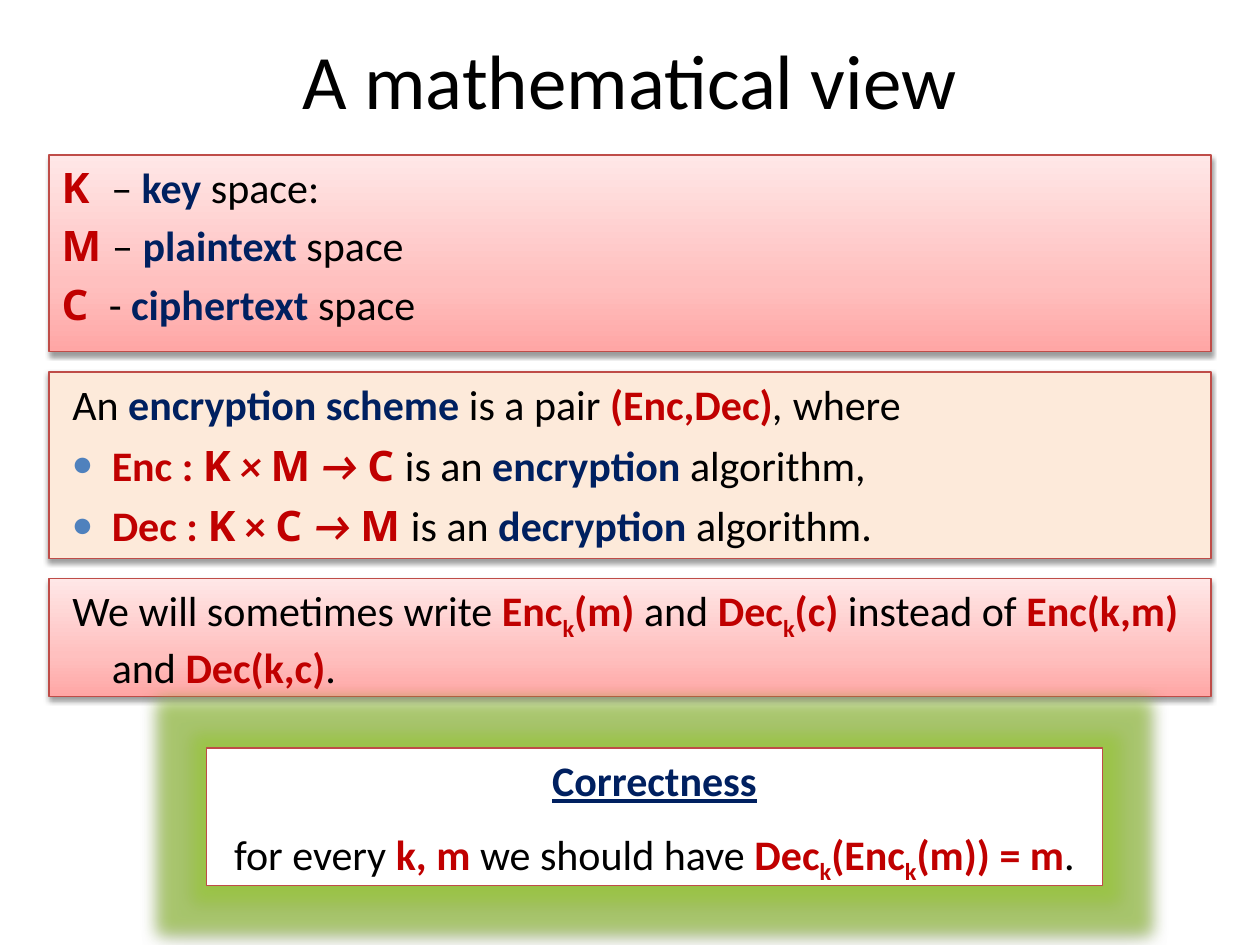
"""Build a slide giving the mathematical view of an encryption scheme."""
from pptx import Presentation
from pptx.dml.color import RGBColor
from pptx.enum import shapes as sh, text as tx
from pptx.oxml import parse_xml
from pptx.util import Pt

NS = 'xmlns:a="http://schemas.openxmlformats.org/drawingml/2006/main"'
PINK = [(0, "FFA6A5"), (35, "FFC0BF"), (100, "FFE7E7")]
LOOKS = {
    "plain": ("Calibri", "000000", False),
    "slant": ("Calibri", "000000", False),
    "navy": ("Calibri", "002060", True),
    "head": ("Calibri", "002060", True),
    "red": ("Calibri", "C00000", True),
    "sub": ("Calibri", "C00000", True),
    "lean": ("Calibri", "C00000", True),
    "set": ("Open Sans", "C00000", True),
}


def paint(color, value):
    """Set a colour from a hex string."""
    color.rgb = RGBColor.from_string(value)


def write(para, runs):
    """Add styled runs to a paragraph."""
    for look, words in runs:
        run = para.add_run()
        run.text = words
        font = run.font
        font.name, hue, font.bold = LOOKS[look]
        font.size = Pt(24)
        paint(font.color, hue)
        if look in ("slant", "lean"):
            font.italic = True
        if look == "head":
            font.underline = True
        if look == "sub":
            run._r.get_or_add_rPr().set("baseline", "-25000")


spaces = [
    [("set", "K  "), ("plain", "– "), ("navy", "key"), ("plain", " space:")],
    [("set", "M "), ("plain", "– "), ("navy", "plaintext"), ("plain", " space")],
    [("set", "C "), ("plain", " - "), ("navy", "ciphertext"), ("plain", " space")],
]
scheme = [
    [("plain", "An "), ("navy", "encryption scheme "), ("plain", "is a pair "),
     ("red", "(Enc,Dec)"), ("slant", ", "), ("plain", "where")],
    [("red", "Enc : "), ("set", "K"), ("lean", " × "), ("set", "M"), ("lean", " → "),
     ("set", "C "), ("plain", "is an "), ("navy", "encryption "), ("plain", "algorithm,")],
    [("red", "Dec : "), ("set", "K"), ("red", " × "), ("set", "C "), ("lean", "→ "),
     ("set", "M "), ("plain", "is an "), ("navy", "decryption "), ("plain", "algorithm.")],
]
short = [
    [("plain", "We will sometimes write "), ("red", "Enc"), ("sub", "k"), ("red", "(m) "),
     ("plain", "and "), ("red", "Dec"), ("sub", "k"), ("red", "(c)"),
     ("plain", " instead of "), ("red", "Enc(k,m) "), ("plain", "and "),
     ("red", "Dec(k,c)"), ("plain", ".")],
]
correct = [
    [("head", "Correctness")],
    [("plain", "for every "), ("red", "k, m"), ("plain", " we should have "),
     ("red", "Dec"), ("sub", "k"), ("red", "(Enc"), ("sub", "k"),
     ("red", "(m)) = m"), ("plain", ".")],
]

deck = Presentation()
deck.slide_width, deck.slide_height = Pt(720), Pt(540)
slide = deck.slides.add_slide(deck.slide_layouts[1])

title, body = slide.placeholders
title.left, title.top, title.width, title.height = Pt(28), Pt(0), Pt(664), Pt(90)
title.text_frame.text = "A mathematical view"
head = title.text_frame.paragraphs[0]
head.alignment = tx.PP_ALIGN.CENTER
head.font.name, head.font.size = "Calibri", Pt(44)
paint(head.font.color, "000000")

panels = [
    ((28, 88.5, 664, 112.5), PINK, spaces, 27, -27, 4.8),
    ((28, 212.5, 664, 106.5), "FDEADA", scheme, 28.8, -22.5, 6),
    ((28, 330.5, 664, 67.5), PINK, short, 28.8, -22.5, 6),
    ((118, 427.5, 512, 78.5), "FFFFFF", correct, 0, 0, 13.4),
]
for place, fill, lines, left, hang, gap in panels:
    spot = [Pt(n) for n in place]
    if lines is spaces:
        box = body
        box.left, box.top, box.width, box.height = spot
    else:
        box = slide.shapes.add_shape(sh.MSO_SHAPE.RECTANGLE, *spot)

    box.fill.solid()
    props = box._element.spPr
    if fill is PINK:
        stops = "".join(f'<a:gs pos="{at * 1000}"><a:srgbClr val="{hue}"/></a:gs>'
                        for at, hue in fill)
        solid = props.find("{*}solidFill")
        props.replace(solid, parse_xml(
            f'<a:gradFill {NS} rotWithShape="1"><a:gsLst>{stops}</a:gsLst>'
            '<a:lin ang="16200000" scaled="1"/></a:gradFill>'))
    else:
        paint(box.fill.fore_color, fill)
    box.line.width = Pt(0.75)
    paint(box.line.color, "BF4C48")

    glow, alpha, blur, drop = "", 38, 3.1, 1.6
    if lines is correct:
        alpha, blur, drop = 43, 5, 2
        glow = (f'<a:glow rad="{Pt(18)}"><a:srgbClr val="9BCB39">'
                '<a:alpha val="60000"/></a:srgbClr></a:glow>')
    props.append(parse_xml(
        f'<a:effectLst {NS}>{glow}<a:outerShdw blurRad="{Pt(blur)}" dist="{Pt(drop)}" '
        'dir="5400000" rotWithShape="0"><a:srgbClr val="000000">'
        f'<a:alpha val="{alpha * 1000}"/></a:srgbClr></a:outerShdw></a:effectLst>'))

    frame = box.text_frame
    frame.word_wrap = True
    frame.auto_size = tx.MSO_AUTO_SIZE.NONE
    frame.vertical_anchor = tx.MSO_ANCHOR.TOP
    for row, runs in enumerate(lines):
        para = frame.add_paragraph() if row else frame.paragraphs[0]
        center = lines is correct
        para.alignment = tx.PP_ALIGN.CENTER if center else tx.PP_ALIGN.LEFT
        para.space_before = Pt(gap if row or not center else 0)
        form = para._p.get_or_add_pPr()
        form.set("marL", str(Pt(left)))
        form.set("indent", str(Pt(hang)))
        if lines is scheme and row:
            marks = ('buClr {}><a:srgbClr val="4F81BD"/></a:buClr>',
                     'buSzPct {} val="80000"/>', 'buFont {} typeface="Calibri"/>',
                     'buChar {} char="●"/>')
        else:
            marks = ("buNone {}/>",)
        for mark in marks:
            form.append(parse_xml("<a:" + mark.format(NS)))
        write(para, runs)

deck.save("out.pptx")
